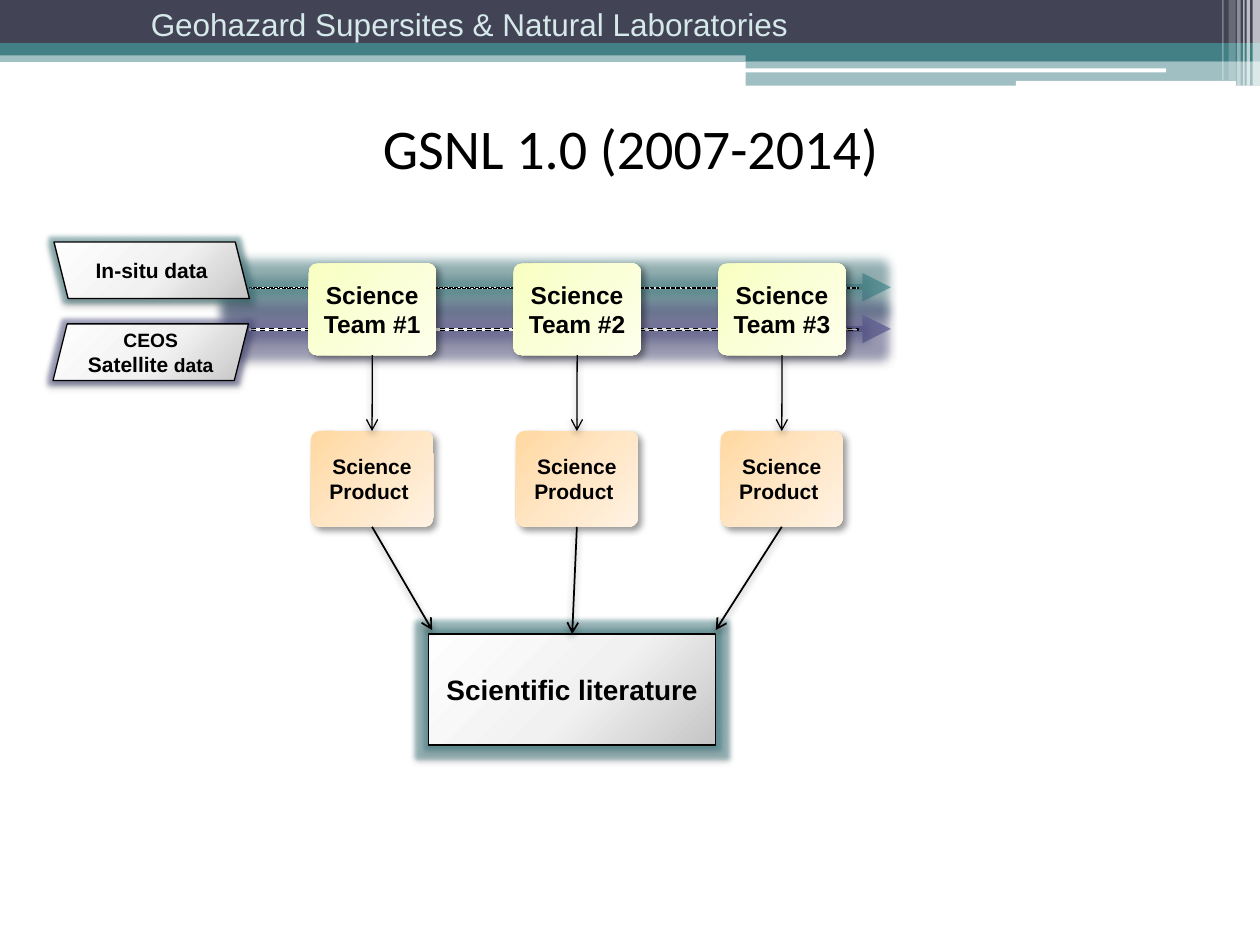
from lxml.etree import SubElement
from pptx import Presentation
from pptx.dml.color import RGBColor
from pptx.enum.dml import MSO_LINE
from pptx.enum.shapes import MSO_CONNECTOR, MSO_SHAPE
from pptx.enum.text import MSO_ANCHOR, PP_ALIGN
from pptx.oxml.ns import qn
from pptx.util import Cm, Pt

HUES = {
    "navy": "424456", "teal": "438086", "violet": "53548A", "white": "FFFFFF",
    "black": "000000", "pale": "D6E9EA", "aqua": "83BCC1", "lilac": "9394BE",
}
FADES = {
    "silver": [(0, "FEFEFE"), (55, "F1F1F1"), (100, "C5C5C5")],
    "orange": [(0, "FFD8A0"), (50, "FFE6C5"), (100, "FFF2E3")],
    "lemon": [(0, "F8FFC1"), (50, "FBFFD8"), (100, "FDFFEB")],
}
SOFT, DROP, CAST = (38, 3.1, 1.6, 90), (40, 4, 3, 45), (40, 4.1, 2, 90)


def rgb(name):
    """Return the named colour."""
    return RGBColor.from_string(HUES[name])


def node(up, tag, **attrs):
    """Add a DrawingML child element."""
    return SubElement(up, qn("a:" + tag), {k: str(v) for k, v in attrs.items()})


def tint(up, code, alpha=100):
    """Add a colour with its opacity in percent."""
    node(node(up, "srgbClr", val=code), "alpha", val=alpha * 1000)


def fade(shape, name):
    """Fill a shape with a three-stop gradient."""
    shape.fill.solid()
    props = shape.element.spPr
    grad = node(props, "gradFill", rotWithShape=1)
    stops = node(grad, "gsLst")
    for pos, code in FADES[name]:
        tint(node(stops, "gs", pos=pos * 1000), code)
    if name == "silver":
        ring = node(grad, "path", path="circle")
        node(ring, "fillToRect", l=-40000, t=-90000, r=140000, b=190000)
    else:
        node(grad, "lin", ang=45 * 60000, scaled=0)
    props.replace(props.find(qn("a:solidFill")), grad)


def effect(item, cast=None, glow=None, size=0):
    """Set the glow and the shadow of a shape or connector."""
    props = item.element.spPr
    box = props.find(qn("a:effectLst"))
    if box is None:
        box = node(props, "effectLst")
    if glow:
        tint(node(box, "glow", rad=Pt(size)), HUES[glow], 45)
    if cast:
        alpha, blur, dist, turn = cast
        drop = node(box, "outerShdw", blurRad=Pt(blur), dist=Pt(dist),
                    dir=turn * 60000, rotWithShape=0)
        tint(drop, HUES["black"], alpha)


def write(frame, *runs, font="Arial", hue="black", bold=True,
          align=PP_ALIGN.CENTER, anchor=MSO_ANCHOR.MIDDLE, wrap=True):
    """Write one paragraph of (text, size) runs."""
    frame.word_wrap, frame.vertical_anchor = wrap, anchor
    para = frame.paragraphs[0]
    para.alignment = align
    for text, size in runs:
        run = para.add_run()
        run.text = text
        run.font.size, run.font.name, run.font.bold = Pt(size), font, bold
        run.font.color.rgb = rgb(hue)


def add(slide, kind, spot):
    """Add a preset shape without a style shadow."""
    shape = slide.shapes.add_shape(kind, *map(Cm, spot))
    shape.shadow.inherit = False
    return shape


def strip(slide, spot, hue, alpha=100, kind=MSO_SHAPE.RECTANGLE):
    """Draw a plain piece of the header band."""
    shape = add(slide, kind, spot)
    shape.fill.solid()
    shape.fill.fore_color.rgb = rgb(hue)
    shape.line.fill.background()
    if alpha < 100:
        node(shape.element.spPr.find(".//" + qn("a:srgbClr")), "alpha", val=alpha * 1000)


def edged(slide, kind, spot, glow, size, dash=None):
    """Draw a silver shape with a thin black edge and a glow."""
    shape = add(slide, kind, spot)
    fade(shape, "silver")
    shape.line.color.rgb, shape.line.width = rgb("black"), Pt(0.75)
    if dash:
        shape.line.dash_style = dash
    effect(shape, SOFT, glow, size)
    return shape


def card(slide, spot, name, text, size):
    """Draw a rounded card with a caption."""
    shape = add(slide, MSO_SHAPE.ROUNDED_RECTANGLE, spot)
    shape.adjustments[0] = 0.09
    fade(shape, name)
    shape.line.fill.background()
    effect(shape, DROP)
    write(shape.text_frame, (text, size))
    return shape


def arrow(slide, start, end, hue="black", width=0.75, head="arrow", cast=CAST, span="med"):
    """Draw a straight line with an arrowhead."""
    line = slide.shapes.add_connector(MSO_CONNECTOR.STRAIGHT, *map(Cm, start + end))
    line.line.color.rgb, line.line.width = rgb(hue), Pt(width)
    node(line.line._get_or_add_ln(), "tailEnd", type=head, w=span, len=span)
    effect(line, cast)
    return line


def header(slide):
    """Draw the band across the top."""
    strip(slide, (0, 1.02, 25.4, 0.23), "teal", 50)
    strip(slide, (0, 0, 25.4, 0.87), "navy")
    strip(slide, (0, 0.87, 25.4, 0.25), "teal")
    strip(slide, (15.03, 0.98, 10.37, 0.25), "teal")
    strip(slide, (15.03, 1.23, 10.37, 0.5), "teal", 50)
    for spot in ((15.01, 1.38, 8.5, 0.08), (20.48, 1.63, 4.44, 0.1)):
        strip(slide, spot, "white", kind=MSO_SHAPE.ROUNDED_RECTANGLE)
    for left, wide, high, alpha in (
            (25.25, 0.15, 1.73, 65), (25.13, 0.07, 1.73, 65), (25.06, 0.03, 1.73, 60),
            (24.94, 0.07, 1.73, 40), (24.77, 0.14, 1.62, 20), (24.64, 0.03, 1.62, 30)):
        strip(slide, (left, 0, wide, high), "white", alpha)
    box = slide.shapes.add_textbox(Cm(2.79), Cm(-0.03), Cm(13.79), Cm(1.02))
    write(box.text_frame, ("Geohazard Supersites & Natural Laboratories", 18), hue="pale",
          bold=False, align=PP_ALIGN.LEFT, anchor=MSO_ANCHOR.TOP, wrap=False)


def feeds(slide):
    """Draw the two data sources and their streams."""
    for row, hue, glow, dash in ((5.79, "aqua", "teal", MSO_LINE.SQUARE_DOT),
                                 (6.63, "lilac", "violet", MSO_LINE.DASH)):
        arrow(slide, (16.46, row), (17.96, row), hue, 3.25, "triangle", None, "lg")
        edged(slide, MSO_SHAPE.RECTANGLE, (5.03, row, 12.27, 0.03), glow, 11, dash)
    ceos = edged(slide, MSO_SHAPE.PARALLELOGRAM, (1.07, 6.53, 3.94, 1.14), "violet", 5)
    write(ceos.text_frame, ("CEOS ", 11), ("Satellite", 12), (" data", 11))
    situ = edged(slide, MSO_SHAPE.PARALLELOGRAM, (1.09, 4.88, 3.94, 1.14), "teal", 5)
    situ.element.spPr.xfrm.set("flipH", "1")
    write(situ.text_frame, ("In-situ data", 12))


def flow(slide):
    """Draw teams, products and the literature they lead to."""
    goal = edged(slide, MSO_SHAPE.RECTANGLE, (8.64, 12.78, 5.79, 2.24), "teal", 5)
    write(goal.text_frame, ("Scientific literature", 16))
    for i, end in enumerate(((8.71, 12.7), (11.53, 12.78), (14.43, 12.7))):
        step = 4.13 * i
        mid = 7.5 + step
        team = card(slide, (6.22 + step, 5.31, 2.57, 1.85), "lemon",
                    f"Science Team #{i + 1}", 14)
        item = card(slide, (6.27 + step, 8.69, 2.46, 1.93), "orange", "Science Product ", 12)
        down = arrow(slide, (mid, 7.16), (mid, 8.69))
        down.begin_connect(team, 2)
        down.end_connect(item, 0)
        last = arrow(slide, (mid, 10.62), end, width=1)
        last.begin_connect(item, 2)
        if i == 1:
            last.end_connect(goal, 0)


def main():
    """Build and save the slide."""
    deck = Presentation()
    deck.slide_width, deck.slide_height = Cm(25.4), Cm(19.05)
    slide = deck.slides.add_slide(deck.slide_layouts[5])
    header(slide)
    title = slide.shapes.title
    title.left, title.top, title.width, title.height = map(Cm, (1.07, 1.7, 23.29, 2.54))
    write(title.text_frame, ("GSNL 1.0 (2007-2014)", 32), font="Calibri", bold=False)
    feeds(slide)
    flow(slide)
    deck.save("out.pptx")


if __name__ == "__main__":
    main()
